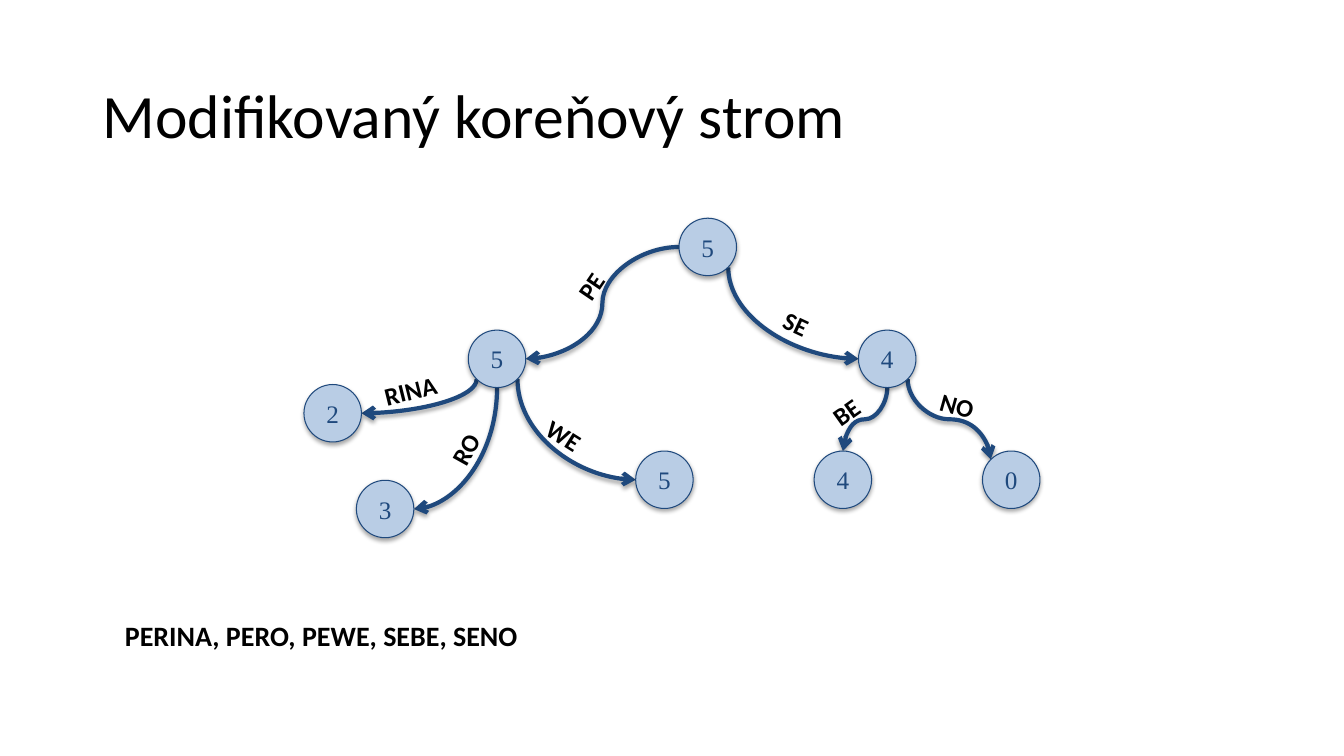
from dataclasses import dataclass

from pptx import Presentation, util as u
from pptx.dml.color import RGBColor
from pptx.enum import shapes, text
from pptx.oxml import parse_xml
from pptx.oxml.ns import nsdecls, qn


@dataclass(frozen=True)
class Theme:
    ink: str = "000000"
    navy: str = "1F497D"
    node_fill: str = "B9CDE5"
    sans: str = "Calibri"
    serif: str = "Times New Roman"
    title_size: int = 44
    words_size: int = 20
    tree_size: int = 18
    outline: float = 0.75
    branch_width: float = 3


@dataclass(frozen=True)
class Node:
    x: float  # centre
    y: float
    count: str


@dataclass(frozen=True)
class Branch:
    parent: str
    leave: str
    child: str
    arrive: str
    syllable: str
    label_box: tuple[float, float, float]  # left, top, width
    angle: float
    bends: int  # 1: quarter curve, 2: S-curve


THEME = Theme()
DIAMETER = 0.57
LABEL_HEIGHT = 0.4
DIAGONAL = 0.71
SIDES = {
    "left": (-1, 0), "right": (1, 0), "top": (0, -1), "bottom": (0, 1),
    "lower left": (-DIAGONAL, DIAGONAL), "lower right": (DIAGONAL, DIAGONAL),
    "upper left": (-DIAGONAL, -DIAGONAL),
}

NODES = {
    "root": Node(7.02, 2.45, "5"),
    "PE": Node(4.93, 3.56, "5"),
    "SE": Node(8.8, 3.56, "4"),
    "PERINA": Node(3.3, 4.1, "2"),
    "PERO": Node(3.82, 5.05, "3"),
    "PEWE": Node(6.59, 4.76, "5"),
    "SEBE": Node(8.36, 4.76, "4"),
    "SENO": Node(10.03, 4.76, "0"),
}

BRANCHES = [
    Branch("root", "left", "PE", "right", "PE", (5.63, 2.64, 0.46), 304.2, 2),
    Branch("root", "lower right", "SE", "left", "SE", (7.68, 3.01, 0.44), 24.9, 1),
    Branch("PE", "lower left", "PERINA", "right", "RINA", (3.71, 3.67, 0.73), 346, 1),
    Branch("PE", "bottom", "PERO", "right", "RO", (4.36, 4.25, 0.51), 299.2, 1),
    Branch("PE", "lower right", "PEWE", "left", "WE", (5.32, 4.12, 0.55), 32.2, 1),
    Branch("SE", "bottom", "SEBE", "top", "BE", (8.16, 3.88, 0.47), 324.7, 2),
    Branch("SE", "lower right", "SENO", "upper left", "NO", (9.23, 3.82, 0.54), 15.6, 2),
]


def write(shape, content: str, *, size: float, font: str = THEME.sans,
          color: str = THEME.ink, bold: bool = False, wrap: bool = True,
          align=text.PP_ALIGN.LEFT, anchor=text.MSO_ANCHOR.TOP):
    """Fill a shape with one formatted run and return that run."""
    frame = shape.text_frame
    frame.word_wrap = wrap
    frame.vertical_anchor = anchor
    if not wrap:
        frame.auto_size = text.MSO_AUTO_SIZE.SHAPE_TO_FIT_TEXT
    paragraph = frame.paragraphs[0]
    paragraph.alignment = align
    run = paragraph.add_run()
    run.text = content
    run.font.size = u.Pt(size)
    run.font.name = font
    run.font.bold = bold
    run.font.color.rgb = RGBColor.from_string(color)
    return run


def add_text(slide, left: float, top: float, width: float, height: float,
             content: str, **format_options):
    box = slide.shapes.add_textbox(*map(u.Inches, (left, top, width, height)))
    write(box, content, **format_options)
    return box


def set_line(line, width: float) -> None:
    line.color.rgb = RGBColor.from_string(THEME.navy)
    line.width = u.Pt(width)


def add_shadow(shape) -> None:
    shape.element.spPr.append(parse_xml(
        f'<a:effectLst {nsdecls("a")}><a:outerShdw blurRad="40000" dist="23000" '
        f'dir="5400000" rotWithShape="0"><a:srgbClr val="{THEME.ink}">'
        '<a:alpha val="35000"/></a:srgbClr></a:outerShdw></a:effectLst>'))


def side_point(node: Node, side: str) -> tuple[float, float]:
    dx, dy = SIDES[side]
    return node.x + dx * DIAMETER / 2, node.y + dy * DIAMETER / 2


def add_branch(slide, branch: Branch) -> None:
    x1, y1 = side_point(NODES[branch.parent], branch.leave)
    x2, y2 = side_point(NODES[branch.child], branch.arrive)
    rotation = 0
    if branch.leave != "left":
        # A curve that starts downwards is a sideways curve turned a quarter
        rotation = 90 if x2 < x1 else 270
        middle_x, middle_y = (x1 + x2) / 2, (y1 + y2) / 2
        half_width, half_height = (y2 - y1) / 2, abs(x2 - x1) / 2
        if rotation == 270:
            half_width = -half_width
        x1, x2 = middle_x - half_width, middle_x + half_width
        y1, y2 = middle_y - half_height, middle_y + half_height
    curve = slide.shapes.add_connector(
        shapes.MSO_CONNECTOR.CURVE, *map(u.Inches, (x1, y1, x2, y2)))
    properties = curve.element.spPr
    properties.find(qn("a:xfrm")).set("rot", str(rotation * 60000))
    properties.find(qn("a:prstGeom")).set("prst", f"curvedConnector{branch.bends + 1}")
    set_line(curve.line, THEME.branch_width)
    properties.find(qn("a:ln")).append(
        parse_xml(f'<a:tailEnd {nsdecls("a")} type="arrow"/>'))
    add_shadow(curve)


def add_node(slide, node: Node) -> None:
    circle = slide.shapes.add_shape(
        shapes.MSO_SHAPE.OVAL, u.Inches(node.x - DIAMETER / 2),
        u.Inches(node.y - DIAMETER / 2), u.Inches(DIAMETER), u.Inches(DIAMETER))
    circle.fill.solid()
    circle.fill.fore_color.rgb = RGBColor.from_string(THEME.node_fill)
    set_line(circle.line, THEME.outline)
    add_shadow(circle)
    count = write(circle, node.count, size=THEME.tree_size, font=THEME.serif,
                  color=THEME.navy, align=text.PP_ALIGN.CENTER,
                  anchor=text.MSO_ANCHOR.MIDDLE)
    # Thin outline around the digit
    count.font._element.insert(0, parse_xml(
        f'<a:ln {nsdecls("a")} w="{u.Pt(THEME.outline)}"><a:solidFill>'
        f'<a:srgbClr val="{THEME.navy}"/></a:solidFill></a:ln>'))


def main() -> None:
    deck = Presentation()
    deck.slide_width, deck.slide_height = u.Inches(13.33), u.Inches(7.5)
    slide = deck.slides.add_slide(deck.slide_layouts[6])

    # Title
    add_text(slide, 0.92, 0.4, 11.5, 1.45, "Modifikovaný koreňový strom",
             size=THEME.title_size, anchor=text.MSO_ANCHOR.MIDDLE)

    # Tree: branches, then nodes, then syllables
    for branch in BRANCHES:
        add_branch(slide, branch)
    for node in NODES.values():
        add_node(slide, node)
    for branch in BRANCHES:
        label = add_text(slide, *branch.label_box, LABEL_HEIGHT, branch.syllable,
                         size=THEME.tree_size, bold=True, wrap=False)
        label.rotation = branch.angle

    # Stored words
    add_text(slide, 1.14, 6.09, 4.66, 0.44, "PERINA, PERO, PEWE, SEBE, SENO",
             size=THEME.words_size, bold=True, wrap=False)

    deck.save("out.pptx")


if __name__ == "__main__":
    main()
